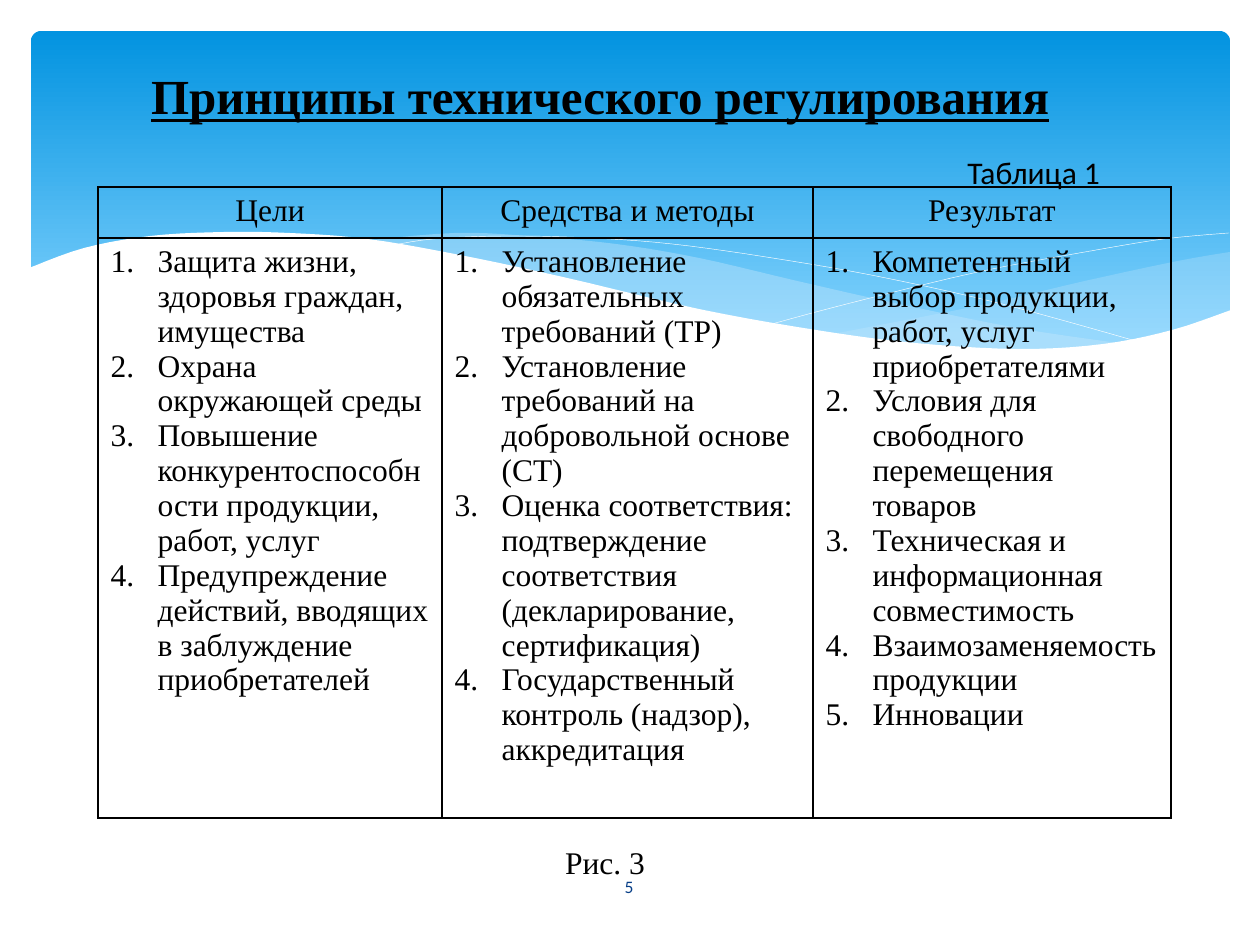
"""Builds a slide with a three-column table of the principles of technical regulation."""
import lxml.etree
import pptx
import pptx.dml.color
import pptx.enum.shapes
import pptx.enum.text
import pptx.oxml.ns
import pptx.util

PX = 914400 / 126
SERIF, SANS = "Times New Roman", "Calibri"
COLORS = {"sky": "0293E0", "light": "83D3FE", "wave": "C6E7FC", "white": "FFFFFF",
          "black": "000000", "number": "073E87"}

TITLE = "Принципы технического регулирования"
COLUMNS = [
    ("Цели", 344, [
        "Защита жизни, здоровья граждан, имущества",
        "Охрана окружающей среды",
        "Повышение конкурентоспособности продукции, работ, услуг",
        "Предупреждение действий, вводящих в заблуждение приобретателей"]),
    ("Средства и методы", 371, [
        "Установление обязательных требований (ТР)",
        "Установление требований на добровольной основе (СТ)",
        "Оценка соответствия: подтверждение соответствия (декларирование, сертификация)",
        "Государственный контроль (надзор), аккредитация"]),
    ("Результат", 358, [
        "Компетентный выбор продукции, работ, услуг приобретателями",
        "Условия для свободного перемещения товаров",
        "Техническая и информационная совместимость",
        "Взаимозаменяемость продукции",
        "Инновации"]),
]
ROWS = [51, 580]
TABLE_AT = (98, 187)

LEFT, CENTER = pptx.enum.text.PP_ALIGN.LEFT, pptx.enum.text.PP_ALIGN.CENTER
TOP, MIDDLE = pptx.enum.text.MSO_ANCHOR.TOP, pptx.enum.text.MSO_ANCHOR.MIDDLE
LABELS = [
    ("Таблица 1", (955, 147, 276, 50), 18, SANS, "black", LEFT, TOP),
    ("Рис. 3", (462, 837, 286, 50), 18, SERIF, "black", CENTER, TOP),
    ("5", (549, 862, 160, 50), 10, SANS, "number", CENTER, MIDDLE),
]

WAVES = [
    ([[(1230, 252), (1178, 261), (1085, 281), (982, 305), (833, 334)],
      [(833, 334), (922, 345), (1012, 350), (1099, 345), (1169, 331), (1230, 311)]],
     "wave", 29),
    ([[(1125, 344), (1017, 328), (890, 302), (793, 280), (699, 258), (616, 244),
       (529, 236), (455, 233), (360, 241)],
      [(360, 241), (456, 256), (566, 280), (713, 312), (819, 333), (910, 345),
       (1003, 350), (1068, 349), (1125, 344)]],
     "wave", 40),
    ([[(389, 246), (433, 239), (505, 236), (591, 238), (672, 244), (766, 257),
       (876, 276), (1002, 304), (1143, 343)]], None, None),
    ([[(772, 324), (847, 304), (978, 272), (1091, 251), (1164, 239), (1229, 233)]],
     None, None),
    ([[(1231, 310), (1172, 330), (1103, 344), (1019, 349), (915, 343), (816, 330),
       (699, 309), (563, 277), (460, 255), (368, 239), (290, 233), (223, 232),
       (150, 236), (84, 248), (29, 268)],
      [(29, 415), (1231, 415)]], "white", 100),
]


def emu(*lengths):
    return [pptx.util.Emu(round(n * PX)) for n in lengths]


def rgb(name):
    return pptx.dml.color.RGBColor.from_string(COLORS[name])


def sub(parent, tag, **attrs):
    return lxml.etree.SubElement(parent, pptx.oxml.ns.qn(tag), attrs)


def smooth(knots, steps=5):
    """Returns points on a Catmull-Rom curve through the knots."""
    ext = [knots[0], *knots, knots[-1]]
    points = [knots[0]]
    for a, b, c, d in zip(ext, ext[1:], ext[2:], ext[3:]):
        for t in (i / steps for i in range(1, steps + 1)):
            points.append(tuple(
                (2 * q + (r - p) * t + (2 * p - 5 * q + 4 * r - w) * t ** 2
                 + (3 * q - p - 3 * r + w) * t ** 3) / 2
                for p, q, r, w in zip(a, b, c, d)))
    return points


def write(p, text, size, font, color="black", align=LEFT):
    p.alignment = align
    r = p.add_run()
    r.text = text
    r.font.size = pptx.util.Pt(size)
    r.font.name = font
    r.font.color.rgb = rgb(color)
    return r


def add_backdrop(s):
    sp = s.shapes.add_shape(pptx.enum.shapes.MSO_SHAPE.ROUNDED_RECTANGLE,
                            *emu(31, 31, 1199, 340))
    sp.adjustments[0] = 0.03
    sp.shadow.inherit = False
    sp.line.fill.background()
    sp.fill.gradient()
    sp.fill.gradient_angle = 270
    for stop, color, position in zip(sp.fill.gradient_stops, ("sky", "light"), (0, 0.9)):
        stop.color.rgb = rgb(color)
        stop.position = position


def add_wave(s, curves, fill, opacity):
    points = [pt for knots in curves for pt in smooth(knots)]
    builder = s.shapes.build_freeform(*emu(*points[0]))
    builder.add_line_segments([emu(*pt) for pt in points[1:]], close=bool(fill))
    sp = builder.convert_to_shape()
    sp.shadow.inherit = False
    if fill:
        sp.line.fill.background()
        sp.fill.solid()
        sp.fill.fore_color.rgb = rgb(fill)
        color = sp._element.spPr.find(".//" + pptx.oxml.ns.qn("a:srgbClr"))
        sub(color, "a:alpha", val=str(opacity * 1000))
    else:
        sp.fill.background()
        sp.line.color.rgb = rgb("white")
        sp.line.width = pptx.util.Pt(0.25)


def add_title(s):
    sp = s.shapes.title
    s.shapes._spTree.append(sp._element)
    sp.left, sp.top, sp.width, sp.height = emu(88, 59, 1024, 72)
    tf = sp.text_frame
    tf.auto_size = pptx.enum.text.MSO_AUTO_SIZE.NONE
    tf.vertical_anchor = pptx.enum.text.MSO_ANCHOR.BOTTOM
    r = write(tf.paragraphs[0], TITLE, 28, SERIF, align=CENTER)
    r.font.bold = r.font.underline = True


def format_cell(cell):
    tcPr = cell._tc.get_or_add_tcPr()
    for side in ("a:lnL", "a:lnR", "a:lnT", "a:lnB"):
        ln = sub(tcPr, side, w="12700")
        sub(sub(ln, "a:solidFill"), "a:srgbClr", val=COLORS["black"])
    cell.fill.background()


def add_principles(s):
    size = sum(width for _, width, _ in COLUMNS), sum(ROWS)
    table = s.shapes.add_table(len(ROWS), len(COLUMNS), *emu(*TABLE_AT, *size)).table
    table.first_row = table.horz_banding = False
    for row, height in zip(table.rows, emu(*ROWS)):
        row.height = height
    indent = emu(47)[0]
    for j, (heading, width, items) in enumerate(COLUMNS):
        table.columns[j].width = emu(width)[0]
        head, body = table.cell(0, j), table.cell(1, j)
        format_cell(head)
        format_cell(body)
        write(head.text_frame.paragraphs[0], heading, 18, SERIF, align=CENTER)
        tf = body.text_frame
        for i, item in enumerate(items):
            p = tf.add_paragraph() if i else tf.paragraphs[0]
            write(p, item, 18, SERIF)
            pPr = p._p.get_or_add_pPr()
            pPr.set("marL", str(indent))
            pPr.set("indent", str(-indent))
            sub(pPr, "a:buAutoNum", type="arabicPeriod")


def add_label(s, text, box, size, font, color, align, anchor):
    tf = s.shapes.add_textbox(*emu(*box)).text_frame
    tf.word_wrap = True
    tf.vertical_anchor = anchor
    write(tf.paragraphs[0], text, size, font, color, align)


def main():
    prs = pptx.Presentation()
    prs.slide_width, prs.slide_height = emu(1260, 945)
    s = prs.slides.add_slide(prs.slide_layouts[5])
    add_backdrop(s)
    for wave in WAVES:
        add_wave(s, *wave)
    add_title(s)
    add_principles(s)
    for label in LABELS:
        add_label(s, *label)
    prs.save("out.pptx")


if __name__ == "__main__":
    main()
